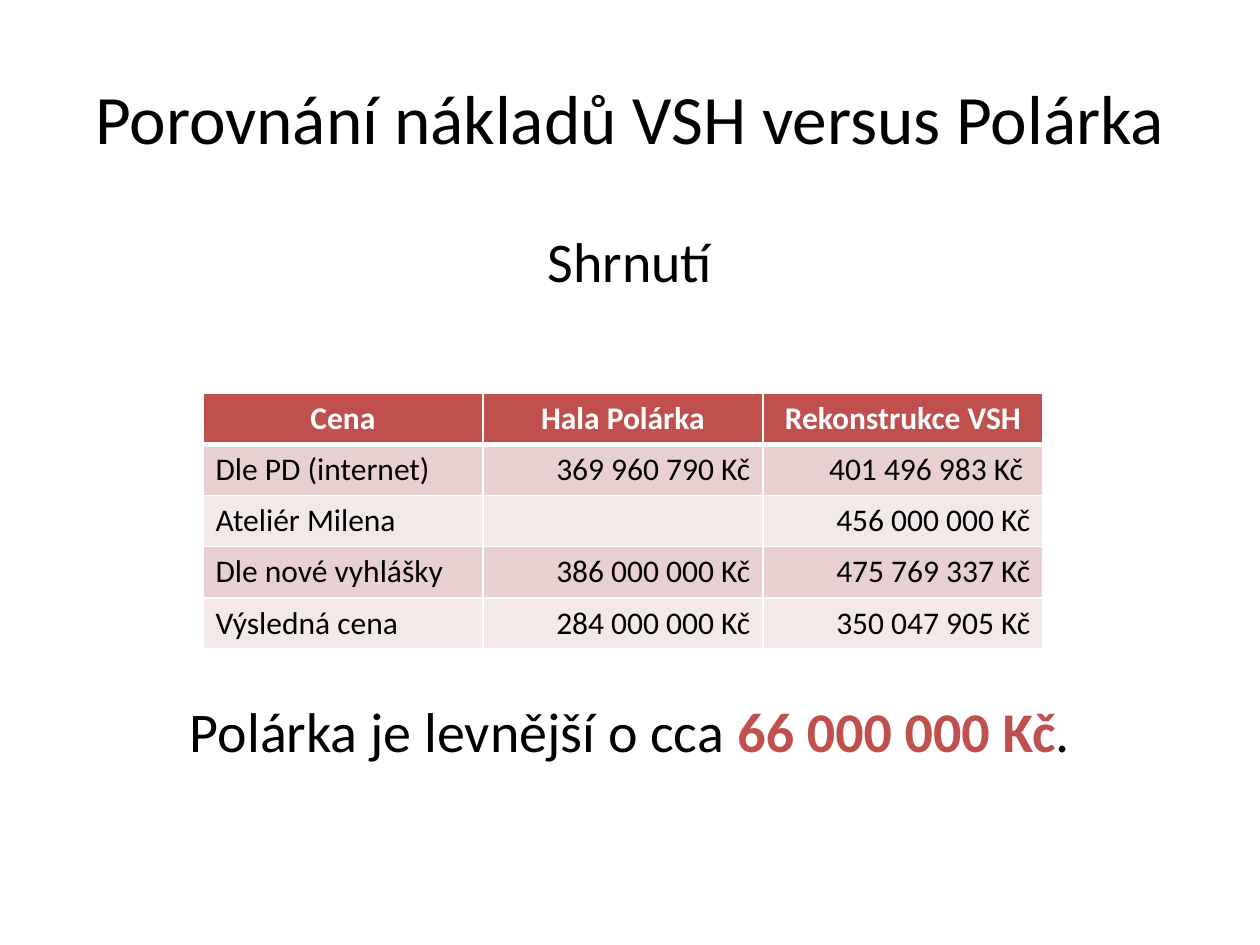
from dataclasses import dataclass

from lxml import etree
from pptx import Presentation
from pptx.dml.color import RGBColor
from pptx.enum import text
from pptx.oxml import ns
from pptx.util import Pt

BLACK = RGBColor(0x00, 0x00, 0x00)
WHITE = RGBColor(0xFF, 0xFF, 0xFF)
RED = RGBColor(0xC0, 0x50, 0x4D)
ROW_FILLS = (RGBColor(0xE8, 0xD0, 0xD0), RGBColor(0xF4, 0xE9, 0xE9))

LEFT, CENTER, RIGHT = text.PP_ALIGN.LEFT, text.PP_ALIGN.CENTER, text.PP_ALIGN.RIGHT
COLUMN_WIDTH, ROW_HEIGHT = 160, 29.2
THIN_RULE, HEADER_RULE = 1, 3


@dataclass(frozen=True)
class PriceRow:
    label: str
    polarka: str
    vsh: str

    def values(self) -> tuple[str, str, str]:
        return self.label, self.polarka, self.vsh


HEADER = PriceRow("Cena", "Hala Polárka", "Rekonstrukce VSH")
PRICES = (
    PriceRow("Dle PD (internet)", "369 960 790 Kč", "401 496 983 Kč "),
    PriceRow("Ateliér Milena", "", "456 000 000 Kč"),
    PriceRow("Dle nové vyhlášky", "386 000 000 Kč", "475 769 337 Kč"),
    PriceRow("Výsledná cena", "284 000 000 Kč", "350 047 905 Kč"),
)


def write(paragraph, words: str, *, size: float, color: RGBColor = BLACK,
          bold: bool = False, align=CENTER) -> None:
    """Append one formatted run to the paragraph."""
    paragraph.alignment = align
    run = paragraph.add_run()
    run.text = words
    run.font.name = "Calibri"
    run.font.size = Pt(size)
    run.font.bold = bold
    run.font.color.rgb = color


def add_frame(slide, left: float, top: float, width: float, height: float,
              anchor=text.MSO_ANCHOR.TOP):
    frame = slide.shapes.add_textbox(Pt(left), Pt(top), Pt(width), Pt(height)).text_frame
    frame.word_wrap = True
    frame.vertical_anchor = anchor
    return frame


def add_borders(cell, top: float, bottom: float) -> None:
    """Give the cell white edges; call before its fill is set."""
    properties = cell._tc.get_or_add_tcPr()
    widths = {"lnL": THIN_RULE, "lnR": THIN_RULE, "lnT": top, "lnB": bottom}
    for edge, width in widths.items():
        line = etree.SubElement(properties, ns.qn(f"a:{edge}"), w=str(Pt(width)))
        fill = etree.SubElement(line, ns.qn("a:solidFill"))
        etree.SubElement(fill, ns.qn("a:srgbClr"), val=str(WHITE))


def add_price_table(slide, left: float, top: float) -> None:
    rows = (HEADER, *PRICES)
    columns = len(HEADER.values())
    table = slide.shapes.add_table(
        len(rows), columns, Pt(left), Pt(top),
        Pt(columns * COLUMN_WIDTH), Pt(len(rows) * ROW_HEIGHT)).table
    for column in table.columns:
        column.width = Pt(COLUMN_WIDTH)
    for r, row in enumerate(rows):
        table.rows[r].height = Pt(ROW_HEIGHT)
        is_header = r == 0
        for c, value in enumerate(row.values()):
            cell = table.cell(r, c)
            add_borders(cell, top=HEADER_RULE if r == 1 else THIN_RULE,
                        bottom=HEADER_RULE if is_header else THIN_RULE)
            cell.fill.solid()
            cell.fill.fore_color.rgb = RED if is_header else ROW_FILLS[(r - 1) % 2]
            if value:
                write(cell.text_frame.paragraphs[0], value, size=18, bold=is_header,
                      color=WHITE if is_header else BLACK,
                      align=CENTER if is_header else RIGHT if c else LEFT)


def main() -> None:
    deck = Presentation()
    deck.slide_width, deck.slide_height = Pt(720), Pt(540)
    slide = deck.slides.add_slide(deck.slide_layouts[6])

    title = add_frame(slide, 36, 21.6, 648, 90, text.MSO_ANCHOR.MIDDLE)
    write(title.paragraphs[0], "Porovnání nákladů VSH versus Polárka", size=39.6)

    body = add_frame(slide, 36, 126, 648, 382.3)
    write(body.paragraphs[0], "Shrnutí", size=32)
    conclusion = body.add_paragraph()
    conclusion.space_before = Pt(230)
    write(conclusion, "Polárka je levnější o cca ", size=32)
    write(conclusion, "66 000 000 Kč", size=32, color=RED, bold=True)
    write(conclusion, ".", size=32)

    add_price_table(slide, 116, 224.8)
    deck.save("out.pptx")


if __name__ == "__main__":
    main()
